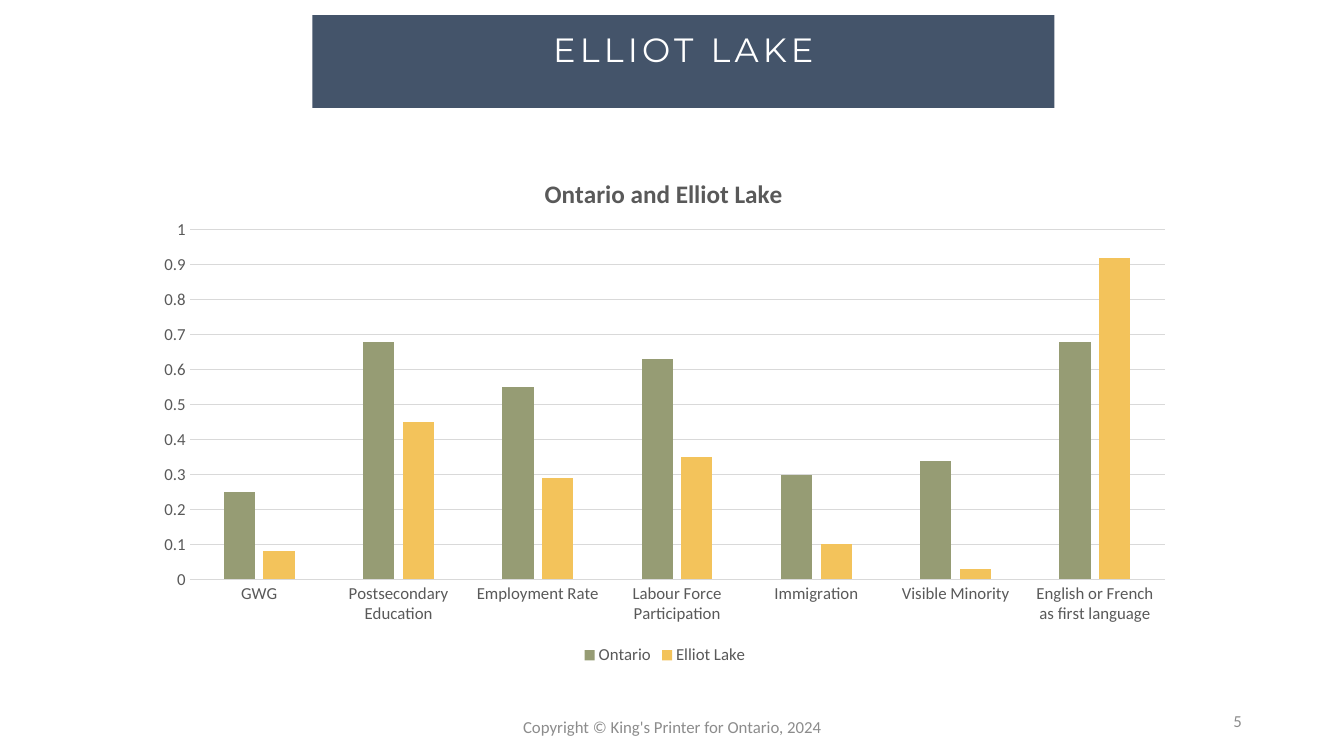
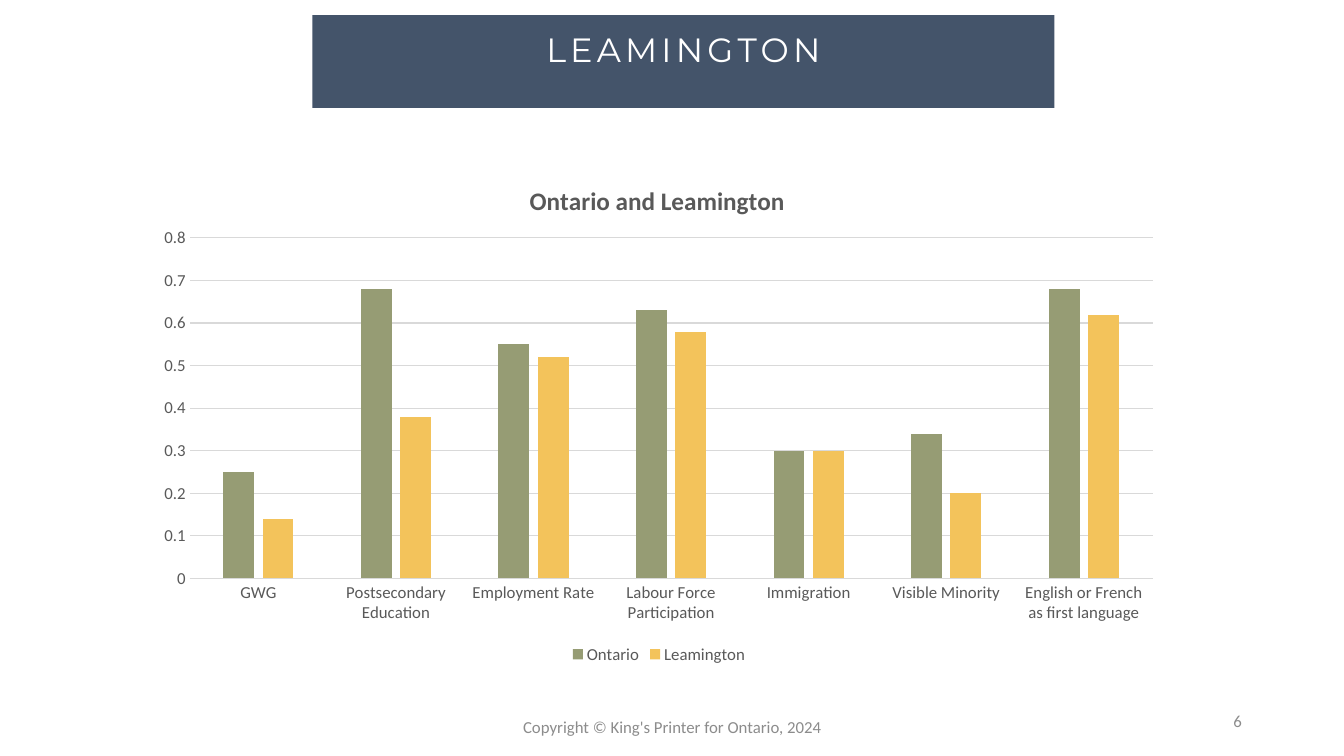
from lxml.etree import SubElement
from pptx import Presentation
from pptx.chart.data import CategoryChartData
from pptx.dml.color import RGBColor
from pptx.enum.chart import XL_CHART_TYPE as ChartType, XL_LEGEND_POSITION as LegendSpot, XL_TICK_MARK as Tick
from pptx.enum.text import MSO_ANCHOR as Anchor, MSO_AUTO_SIZE as AutoSize, PP_ALIGN as Align
from pptx.oxml.ns import qn
from pptx.util import Inches, Pt

WIDTH, HEIGHT = 13.33, 7.5
NAVY, WHITE, GREY = "44546A", "FFFFFF", "8C8C8C"
INK, GRID, OLIVE, GOLD = "595959", "D9D9D9", "969C74", "F3C35B"
BODY, DISPLAY = "Calibri", "Montserrat"

BAND = (23.25, 2, 55.2, 12.27)
PAGE_NUMBER = (70.65, 92.67, 22.5, 5.33)
FOOTER = (33.15, 93.47, 33.75, 5.33)
COPYRIGHT = "Copyright © King's Printer for Ontario, 2024"

PLOT_LEFT, PLOT_TOP, PLOT_RIGHT, PLOT_BOTTOM = 0.45, 0.84, 0.21, 0.89

INDICATORS = ["GWG", "Postsecondary Education", "Employment Rate",
              "Labour Force Participation", "Immigration",
              "Visible Minority", "English or French as first language"]
ONTARIO = [0.25, 0.68, 0.55, 0.63, 0.3, 0.34, 0.68]

COMMUNITIES = [
    dict(page=5, name="Elliot Lake", rates=[0.08, 0.45, 0.29, 0.35, 0.1, 0.03, 0.92],
         top_rate=1, box=(10.73, 19.2, 77.5, 69.33), heading_left=0.38),
    dict(page=6, name="Leamington", rates=[0.14, 0.38, 0.52, 0.58, 0.3, 0.2, 0.62],
         top_rate=0.8, box=(10.73, 20.27, 76.6, 68.13), heading_left=0.37),
]


def color(value):
    return RGBColor.from_string(value)


def place(box):
    left, top, width, height = box
    return [Inches(share * side / 100) for share, side in
            ((left, WIDTH), (top, HEIGHT), (width, WIDTH), (height, HEIGHT))]


def style_font(font, size=12, ink=INK, face=BODY, bold=False):
    font.size, font.name, font.bold = Pt(size), face, bold
    font.color.rgb = color(ink)


def write(frame, text, align=Align.CENTER, spacing=0, **font_format):
    paragraph = frame.paragraphs[0]
    paragraph.alignment = align
    run = paragraph.add_run()
    run.text = text
    style_font(run.font, **font_format)
    if spacing:
        run.font._element.set("spc", str(spacing * 100))


def add_title_band(slide, name, box):
    band = slide.shapes.title
    band.left, band.top, band.width, band.height = place(box)
    band.fill.solid()
    band.fill.fore_color.rgb = color(NAVY)
    frame = band.text_frame
    frame.auto_size, frame.word_wrap = AutoSize.NONE, True
    frame.vertical_anchor = Anchor.TOP
    frame.margin_left = frame.margin_right = int(band.width * 0.035)
    frame.margin_top, frame.margin_bottom = int(band.height * 0.15), 0
    write(frame, name.upper(), spacing=3, size=24, ink=WHITE, face=DISPLAY)


def add_note(slide, text, box, align=Align.CENTER):
    frame = slide.shapes.add_textbox(*place(box)).text_frame
    frame.word_wrap = True
    frame.vertical_anchor = Anchor.MIDDLE
    write(frame, text, align=align, ink=GREY)


def set_layout(parent, index, inner=False, **shares):
    for old in parent.findall(qn("c:layout")):
        parent.remove(old)
    layout = parent.makeelement(qn("c:layout"), {})
    parent.insert(index, layout)
    manual = SubElement(layout, qn("c:manualLayout"))
    if inner:
        SubElement(manual, qn("c:layoutTarget"), val="inner")
    for mode in ("xMode", "yMode"):
        SubElement(manual, qn("c:" + mode), val="edge")
    for key, share in shares.items():
        SubElement(manual, qn("c:" + key), val=f"{share:.4f}")


def style_axes(chart, top_rate):
    indicators, rates = chart.category_axis, chart.value_axis
    for axis in (indicators, rates):
        axis.major_tick_mark = axis.minor_tick_mark = Tick.NONE
        style_font(axis.tick_labels.font)
    rates.minimum_scale, rates.maximum_scale, rates.major_unit = 0, top_rate, 0.1
    rates.has_major_gridlines = True
    rates.format.line.fill.background()
    for line in (indicators.format.line, rates.major_gridlines.format.line):
        line.color.rgb = color(GRID)
        line.width = Pt(0.75)


def add_comparison(slide, name, rates, top_rate, box, heading_left):
    data = CategoryChartData()
    data.categories = INDICATORS
    data.add_series("Ontario", ONTARIO)
    data.add_series(name, rates)
    left, top, width, height = place(box)
    chart = slide.shapes.add_chart(ChartType.COLUMN_CLUSTERED, left, top, width, height, data).chart
    style_font(chart.font, size=10, ink="000000")

    chart.has_title = True
    heading = chart.chart_title
    write(heading.text_frame, f"Ontario and {name}", size=18, bold=True)
    heading.include_in_layout = False
    set_layout(heading._element, 1, x=heading_left, y=0.05)

    plot = chart.plots[0]
    plot.gap_width, plot.overlap, plot.vary_by_categories = 219, -27, False
    for series, fill in zip(plot.series, (OLIVE, GOLD)):
        series.format.fill.solid()
        series.format.fill.fore_color.rgb = color(fill)
    across, down = width.inches, height.inches
    set_layout(chart._chartSpace.chart.plotArea, 0, inner=True,
               x=PLOT_LEFT / across, y=PLOT_TOP / down,
               w=1 - (PLOT_LEFT + PLOT_RIGHT) / across,
               h=1 - (PLOT_TOP + PLOT_BOTTOM) / down)
    style_axes(chart, top_rate)

    chart.has_legend = True
    chart.legend.position = LegendSpot.BOTTOM
    chart.legend.include_in_layout = False
    style_font(chart.legend.font)


def add_community_slide(deck, page, name, **comparison):
    slide = deck.slides.add_slide(deck.slide_layouts[5])
    add_title_band(slide, name, BAND)
    add_note(slide, str(page), PAGE_NUMBER, align=Align.RIGHT)
    add_note(slide, COPYRIGHT, FOOTER)
    add_comparison(slide, name, **comparison)


def main():
    deck = Presentation()
    deck.slide_width, deck.slide_height = Inches(WIDTH), Inches(HEIGHT)
    for community in COMMUNITIES:
        add_community_slide(deck, **community)
    deck.save("out.pptx")


if __name__ == "__main__":
    main()
